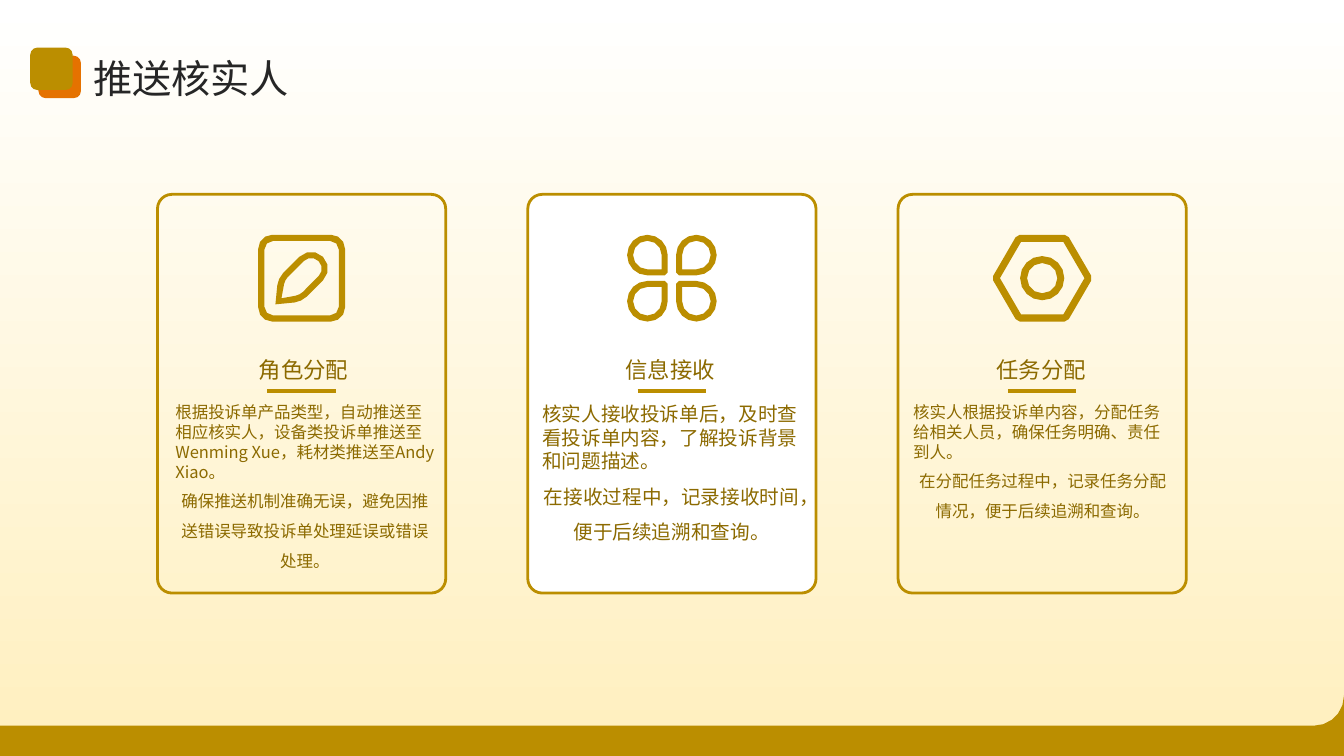
import dataclasses
import typing

import lxml.etree
import pptx
import pptx.dml.color
import pptx.enum.dml
import pptx.enum.shapes
import pptx.enum.text
import pptx.oxml.ns
import pptx.util

Pt = pptx.util.Pt
Align = pptx.enum.text.PP_ALIGN
Preset = pptx.enum.shapes.MSO_SHAPE
Corner = tuple[float, float, float]  # x, y, rounding radius
Contour = list[Corner]

COLOURS = {"gold": "BB8E00", "brown": "8C6A00", "orange": "E57200",
           "ink": "262626", "white": "FFFFFF", "cream": "FFEFBE"}
FONT = "Noto Sans CJK SC"
WIDTH, HEIGHT = 960, 540
CARD_LEFT, CARD_TOP, CARD_PITCH = 112.5, 138.8, 264.5
CARD_WIDTH, CARD_HEIGHT = 205.9, 284.8
ICON_MIDDLE, RULE_TOP, RULE_HALF = 198.7, 279.4, 24.5


@dataclasses.dataclass
class Paragraph:
    text: str
    size: float
    spacing: float
    alignment: Align = Align.CENTER
    colour: str = "brown"


@dataclasses.dataclass
class Card:
    heading: str
    duty: str
    follow_up: str
    size: float
    inset: float
    icon: list[Contour]
    fill: str | None = None


def rgb(name: str) -> pptx.dml.color.RGBColor:
    return pptx.dml.color.RGBColor.from_string(COLOURS[name])


def set_values(target: typing.Any, values: dict[str, typing.Any]) -> None:
    for name, value in values.items():
        setattr(target, name, value)


def rectangle(x: float, y: float, radius: float) -> Contour:
    """Rounded rectangle centred on 0, 0 with half sizes x and y."""
    return [(-x, -y, radius), (x, -y, radius), (x, y, radius), (-x, y, radius)]


def hexagon(x: float, y: float, radius: float) -> Contour:
    return [(sign * px, sign * py, radius) for sign in (1, -1)
            for px, py in ((x, 0), (x / 2, y), (-x / 2, y))]


def petal(across: int, down: int, inset: float, tip: float) -> Contour:
    """Drop in one quarter of the icon, pointed towards its centre."""
    near_x, near_y, far_x, far_y = 3 + inset, 2 + inset, 32 - inset, 31 - inset
    bulge = 14.5 - inset
    corners = [(near_x, near_y, tip), (far_x, near_y, bulge),
               (far_x, far_y, bulge), (near_x, far_y, bulge)]
    return [(across * x, down * y, radius) for x, y, radius in corners]


def pencil(tip: float, shoulder: Corner, cap: Corner) -> Contour:
    """Pencil outline, symmetric about the rising diagonal."""
    half = [shoulder, cap]
    mirrored = [(-y, -x, radius) for x, y, radius in reversed(half)]
    return [(-tip, tip, 0), *half, *mirrored]


def outline_points(contour: Contour) -> list[tuple[float, float]]:
    """Trace the contour, turning each rounded corner into a few segments."""
    points = []
    for index, (x, y, radius) in enumerate(contour):
        if not radius:
            points.append((x, y))
            continue
        ends = []
        for other in (contour[index - 1], contour[(index + 1) % len(contour)]):
            dx, dy = other[0] - x, other[1] - y
            length = (dx * dx + dy * dy) ** 0.5
            ends.append((dx / length * radius, dy / length * radius))
        steps = round(radius ** 0.5)
        for step in range(steps + 1):
            t = step / steps
            before = (1 - t) ** 3 + 1.34 * t * (1 - t) ** 2
            after = t ** 3 + 1.34 * t * t * (1 - t)
            point = (round(x + before * ends[0][0] + after * ends[1][0], 2),
                     round(y + before * ends[0][1] + after * ends[1][1], 2))
            if point not in points:
                points.append(point)
    return points


def style_shape(shape: typing.Any, fill: str | None, line: str | None = None) -> None:
    shape.shadow.inherit = False
    if fill:
        shape.fill.solid()
        shape.fill.fore_color.rgb = rgb(fill)
    else:
        shape.fill.background()
    if line:
        shape.line.color.rgb = rgb(line)
        shape.line.width = Pt(2)
    else:
        shape.line.fill.background()


def draw_outline(page: typing.Any, contours: list[Contour], x: float = 0, y: float = 0) -> None:
    """Draw contours as one gold shape; nested contours become holes."""
    builder = None
    for contour in contours:
        points = [(Pt(x + px), Pt(y + py)) for px, py in outline_points(contour)]
        if builder is None:
            builder = page.shapes.build_freeform(*points[0], scale=1.0)
        else:
            builder.move_to(*points[0])
        builder.add_line_segments(points[1:], close=True)
    style_shape(builder.convert_to_shape(), "gold")


def write_text(box: typing.Any, paragraphs: list[Paragraph], middle: bool = False) -> None:
    frame = box.text_frame
    anchor = pptx.enum.text.MSO_ANCHOR
    set_values(frame, {"word_wrap": True, "auto_size": pptx.enum.text.MSO_AUTO_SIZE.NONE,
                       "vertical_anchor": anchor.MIDDLE if middle else anchor.TOP,
                       "margin_left": 0, "margin_right": 0,
                       "margin_top": 0, "margin_bottom": 0})
    for index, item in enumerate(paragraphs):
        para = frame.add_paragraph() if index else frame.paragraphs[0]
        set_values(para, {"alignment": item.alignment, "line_spacing": item.spacing,
                          "space_before": Pt(0), "space_after": Pt(0)})
        span = para.add_run()
        span.text = item.text
        set_values(span.font, {"size": Pt(item.size), "name": FONT, "bold": False})
        span.font.color.rgb = rgb(item.colour)
    for properties in box.element.iter(pptx.oxml.ns.qn("a:rPr")):
        lxml.etree.SubElement(properties, pptx.oxml.ns.qn("a:ea"), typeface=FONT)


def draw_rule(page: typing.Any, centre: float) -> None:
    rule = page.shapes.add_connector(
        pptx.enum.shapes.MSO_CONNECTOR.STRAIGHT, Pt(centre - RULE_HALF), Pt(RULE_TOP),
        Pt(centre + RULE_HALF), Pt(RULE_TOP))
    rule.line.color.rgb = rgb("gold")
    rule.line.width = Pt(3)
    properties = rule.element.find(pptx.oxml.ns.qn("p:spPr"))
    lxml.etree.SubElement(properties, pptx.oxml.ns.qn("a:effectLst"))


def draw_card(page: typing.Any, card: Card, left: float) -> None:
    frame = page.shapes.add_shape(Preset.ROUNDED_RECTANGLE, Pt(left), Pt(CARD_TOP),
                                  Pt(CARD_WIDTH), Pt(CARD_HEIGHT))
    frame.adjustments[0] = 0.05
    style_shape(frame, card.fill, "gold")
    centre = left + CARD_WIDTH / 2
    draw_outline(page, card.icon, centre, ICON_MIDDLE)
    draw_rule(page, centre)
    text_left = Pt(left + card.inset)
    heading = page.shapes.add_textbox(text_left, Pt(239), Pt(183), Pt(40.3))
    write_text(heading, [Paragraph(card.heading, 16, 1.5)], middle=True)
    body = page.shapes.add_textbox(text_left, Pt(287.3), Pt(185), Pt(120.2))
    write_text(body, [Paragraph(card.duty, card.size, 1, Align.LEFT),
                      Paragraph(card.follow_up, card.size, 1.5)])


def draw_background(page: typing.Any) -> None:
    backdrop = page.shapes.add_shape(Preset.FLOWCHART_PROCESS, 0, 0, Pt(WIDTH), Pt(HEIGHT))
    style_shape(backdrop, None)
    backdrop.fill.gradient()
    backdrop.fill.gradient_angle = 270
    for stop, colour, position in zip(backdrop.fill.gradient_stops, ("white", "cream"), (0, 1)):
        stop.color.rgb = rgb(colour)
        stop.position = position
    draw_outline(page, [[(0, HEIGHT, 0), (WIDTH, HEIGHT, 0), (WIDTH, 496.8, 0),
                         (WIDTH, 518.4, 21.6), (0, 518.4, 0)]])


def draw_title(page: typing.Any, text: str) -> None:
    title = page.shapes.title
    set_values(title, {"left": Pt(66.6), "top": Pt(35.3), "width": Pt(840), "height": Pt(36.7)})
    write_text(title, [Paragraph(text, 28, 1.1, Align.LEFT, "ink")], middle=True)
    title.element.getparent().append(title.element)  # bring in front of the backdrop
    marker = page.shapes.add_group_shape()
    for left, top, colour in ((27.5, 39.8, "orange"), (21.6, 34, "gold")):
        square = marker.shapes.add_shape(Preset.ROUNDED_RECTANGLE, Pt(left), Pt(top),
                                         Pt(30.3), Pt(30.3))
        style_shape(square, colour)


EDIT_ICON = [rectangle(31, 31, 10), rectangle(26.6, 26.6, 6.2),
             pencil(18.7, (-16.9, 0.1, 5), (6.8, -23.7, 11.9)),
             pencil(14.4, (-12, 1.3, 3), (6.8, -17.5, 7.5))]
CLOVER_ICON = [petal(across, down, inset, tip) for across in (-1, 1) for down in (-1, 1)
               for inset, tip in ((0, 2), (4.3, 0))]
NUT_ICON = [hexagon(36, 31, 2), hexagon(30.2, 25.9, 0),
            rectangle(15.8, 15.8, 15.8), rectangle(10.8, 10.8, 10.8)]
CARDS = [
    Card("角色分配",
         "根据投诉单产品类型，自动推送至相应核实人，设备类投诉单推送至Wenming Xue，耗材类推送至Andy Xiao。",
         "确保推送机制准确无误，避免因推送错误导致投诉单处理延误或错误处理。", 11.8, 12.8, EDIT_ICON),
    Card("信息接收", "核实人接收投诉单后，及时查看投诉单内容，了解投诉背景和问题描述。",
         "在接收过程中，记录接收时间，便于后续追溯和查询。", 14, 10.3, CLOVER_ICON, "white"),
    Card("任务分配", "核实人根据投诉单内容，分配任务给相关人员，确保任务明确、责任到人。",
         "在分配任务过程中，记录任务分配情况，便于后续追溯和查询。", 11.8, 10.8, NUT_ICON),
]


def main() -> None:
    deck = pptx.Presentation()
    set_values(deck, {"slide_width": Pt(WIDTH), "slide_height": Pt(HEIGHT)})
    page = deck.slides.add_slide(deck.slide_layouts.get_by_name("Title Only"))
    draw_background(page)
    for index, card in enumerate(CARDS):
        draw_card(page, card, CARD_LEFT + index * CARD_PITCH)
    draw_title(page, "推送核实人")
    deck.save("out.pptx")


if __name__ == "__main__":
    main()
